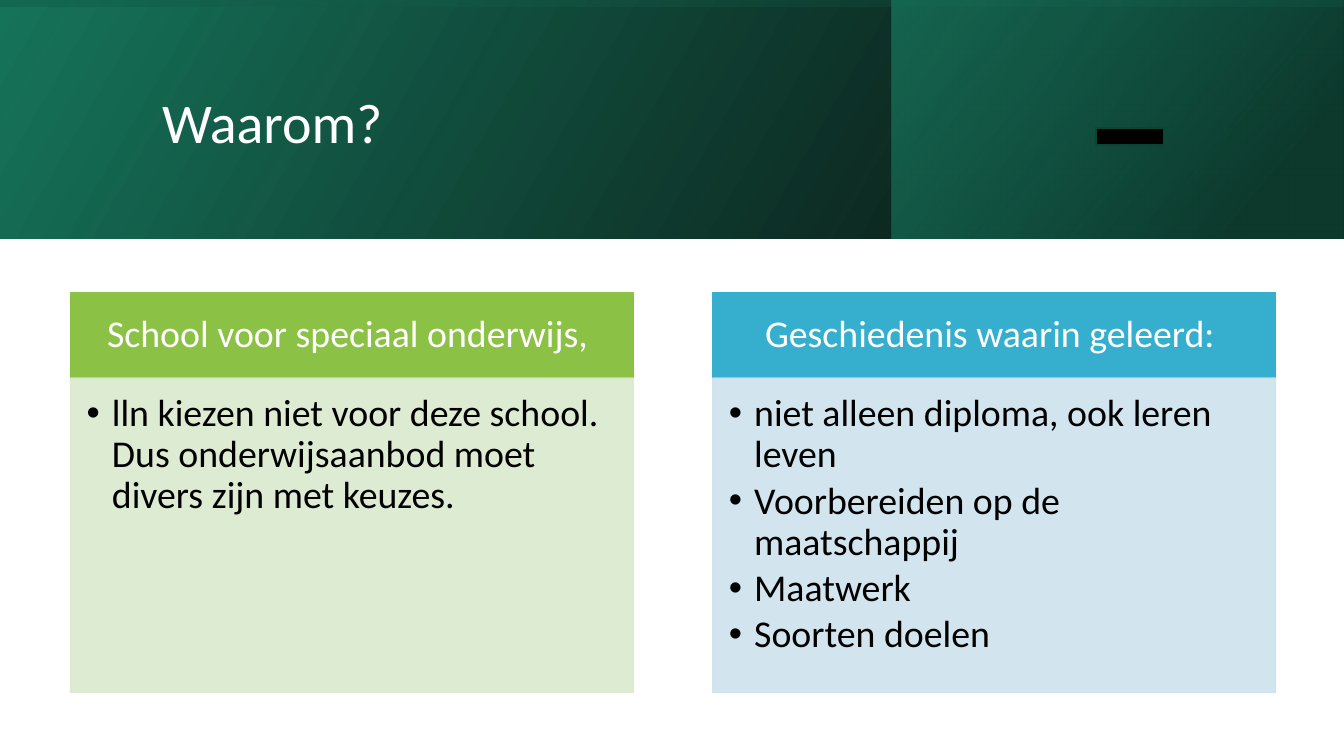
from lxml.etree import SubElement
from pptx import Presentation
from pptx.dml.color import RGBColor
from pptx.enum.shapes import MSO_SHAPE
from pptx.enum.text import MSO_ANCHOR, PP_ALIGN
from pptx.oxml import parse_xml
from pptx.oxml.ns import nsdecls, qn
from pptx.util import Inches, Pt

TITLE = "Waarom?"
COLUMNS = [
    ("School voor speciaal onderwijs, ", "green", "pale_green",
     ["lln kiezen niet voor deze school. Dus onderwijsaanbod moet divers zijn met keuzes."]),
    ("Geschiedenis waarin geleerd: ", "blue", "pale_blue",
     ["niet alleen diploma, ook leren leven", "Voorbereiden op de maatschappij",
      "Maatwerk", "Soorten doelen"]),
]
COLORS = {
    "white": "FFFFFF", "black": "000000", "green": "8BC145", "pale_green": "DAE9CF",
    "blue": "36AFCE", "pale_blue": "CEE3ED", "teal": "16745A", "deep_teal": "0E4D3C",
    "bright_teal": "1D9A78", "dash_edge": "0D4335",
}
FONT = "Calibri"
WIDTH, HEIGHT, BANNER = 13.33, 7.5, 2.37

# Banner layers: frame, rotation, gradient angle, stops (position, colour, opacity)
LAYERS = [
    ((0, 0, WIDTH, BANNER), 0, 330, [(0, "black", 96), (100, "teal", 100)]),
    ((8.84, 0, 4.48, BANNER), 0, 320, [(19, "deep_teal", 68), (100, "bright_teal", 48)]),
    (((WIDTH - BANNER) / 2, (BANNER - WIDTH) / 2, BANNER, WIDTH), 270, 350,
     [(23, "teal", 16), (99, "black", 45)]),
]

# Column grid
LEFT, PITCH, COLUMN_WIDTH = 0.7, 6.37, 5.58
TOP, HEAD_HEIGHT, BODY_HEIGHT = 2.9, 0.85, 3.12


def rgb(name):
    return RGBColor.from_string(COLORS[name])


def add_box(page, frame, fill=None, line=None, opacity=100):
    box = page.shapes.add_shape(MSO_SHAPE.RECTANGLE, *map(Inches, frame))
    box.shadow.inherit = False
    if fill:
        box.fill.solid()
        box.fill.fore_color.rgb = rgb(fill)
    if line:
        box.line.color.rgb = rgb(line)
        box.line.width = Pt(1)
    else:
        box.line.fill.background()
    if opacity < 100:
        for color in box._element.spPr.iter(qn("a:srgbClr")):
            SubElement(color, qn("a:alpha"), val=str(opacity * 1000))
    return box


def add_gradient(box, angle, stops):
    marks = "".join(
        f'<a:gs pos="{position * 1000}"><a:srgbClr val="{COLORS[color]}">'
        f'<a:alpha val="{opacity * 1000}"/></a:srgbClr></a:gs>'
        for position, color, opacity in stops)
    properties = box._element.spPr
    properties.find(qn("a:prstGeom")).addnext(parse_xml(
        f'<a:gradFill {nsdecls("a")} rotWithShape="1"><a:gsLst>{marks}</a:gsLst>'
        f'<a:lin ang="{angle * 60000}" scaled="0"/></a:gradFill>'))
    properties.find(qn("a:xfrm")).set("flipH", "1")


def write(box, lines, size, color, margins, anchor, align=PP_ALIGN.LEFT, bullets=False):
    frame = box.text_frame
    frame.word_wrap = True
    frame.vertical_anchor = anchor
    (frame.margin_left, frame.margin_top,
     frame.margin_right, frame.margin_bottom) = map(Inches, margins)
    frame.text = "\n".join(lines)
    for para in frame.paragraphs:
        para.alignment = align
        para.line_spacing = 0.9
        if bullets:
            para.space_after = Pt(4)
            properties = para._p.get_or_add_pPr()
            properties.set("marL", str(Inches(0.25)))
            properties.set("indent", str(-Inches(0.25)))
            SubElement(properties, qn("a:buFont"), typeface="Arial")
            SubElement(properties, qn("a:buChar"), char="•")
        for span in para.runs:
            span.font.name = FONT
            span.font.size = Pt(size)
            span.font.color.rgb = rgb(color)


def main():
    deck = Presentation()
    deck.slide_width, deck.slide_height = Inches(WIDTH), Inches(HEIGHT)
    page = deck.slides.add_slide(deck.slide_layouts[6])

    # Banner and title
    for frame, rotation, angle, stops in LAYERS:
        layer = add_box(page, frame)
        layer.rotation = rotation
        add_gradient(layer, angle, stops)
    title = page.shapes.add_textbox(*map(Inches, (1.51, 0.38, 10.63, 1.72)))
    write(title, [TITLE], 40, "white", (0.1, 0.05, 0.1, 0.05), MSO_ANCHOR.MIDDLE)

    # Two columns, each a heading over a list
    for index, (heading, strong, pale, points) in enumerate(COLUMNS):
        left = LEFT + index * PITCH
        head = add_box(page, (left, TOP, COLUMN_WIDTH, HEAD_HEIGHT), strong, strong)
        write(head, [heading], 27, "white", (0.21, 0.12, 0.21, 0.12),
              MSO_ANCHOR.MIDDLE, PP_ALIGN.CENTER)
        body = add_box(page, (left, TOP + HEAD_HEIGHT, COLUMN_WIDTH, BODY_HEIGHT),
                       pale, pale, opacity=90)
        write(body, points, 27, "black", (0.16, 0.16, 0.21, 0.24),
              MSO_ANCHOR.TOP, bullets=True)

    # Dash in the banner
    add_box(page, (10.87, 1.27, 0.67, 0.17), "black", "dash_edge")

    deck.save("out.pptx")


if __name__ == "__main__":
    main()
